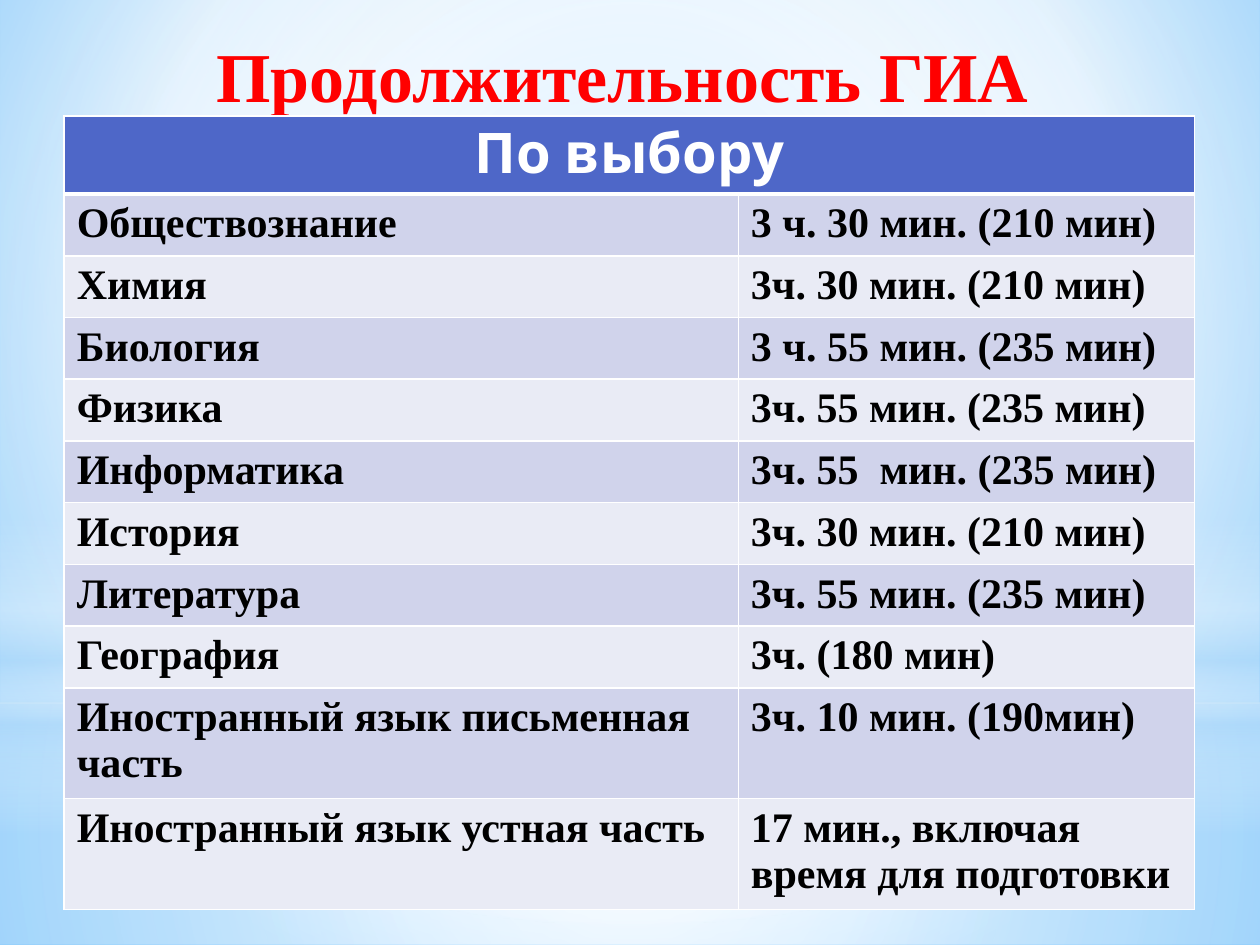
from dataclasses import dataclass

from pptx import Presentation
from pptx.dml.color import RGBColor
from pptx.enum.shapes import MSO_SHAPE
from pptx.enum.text import MSO_ANCHOR, MSO_AUTO_SIZE, PP_ALIGN
from pptx.oxml import parse_xml
from pptx.oxml.ns import nsdecls, qn
from pptx.util import Inches, Pt

RECT, OVAL = MSO_SHAPE.RECTANGLE, MSO_SHAPE.OVAL
TOP, NO_FIT = MSO_ANCHOR.TOP, MSO_AUTO_SIZE.NONE
LEFT, CENTER = PP_ALIGN.LEFT, PP_ALIGN.CENTER


@dataclass(frozen=True)
class Theme:
    white: str = "FFFFFF"
    pale: str = "B4DCFA"
    red: str = "FF0000"
    black: str = "000000"
    head: str = "4E67C8"
    bands: tuple = ("D0D3EB", "E9EBF5")
    sky: tuple = ((0, "9ED5FF", 100), (60, "FFFFFF", 100), (100, "5BB9FF", 100))
    serif: str = "Times New Roman"
    sans: str = "Karla"
    title_size: int = 40
    head_size: int = 32
    cell_size: int = 24


T = Theme()
MID = (50, 50, 50, 50)
W, P = T.white, T.pale

# Backdrop layers: shape, box, colour stops (place, colour, opacity), centre
LAYERS = [
    (RECT, (0, 5.58, 10, 1.92), [(0, W, 91), (37, W, 76), (100, P, 79)], MID),
    (RECT, (0, 0, 10, 5.58), [(0, W, 89), (48, W, 62), (100, P, 79)], MID),
    (RECT, (0, 4.12, 10, 2.5), [(0, W, 0), (29, W, 30), (45, P, 40),
                                (55, W, 26), (65, P, 60), (100, W, 0)], None),
    (OVAL, (0, 1.75, 10, 5.58), [(0, W, 100), (56, W, 0)], MID),
]

EXAMS = [
    ("Обществознание", "3 ч. 30 мин. (210 мин)"),
    ("Химия", "3ч. 30 мин. (210 мин)"),
    ("Биология", "3 ч. 55 мин. (235 мин)"),
    ("Физика", "3ч. 55 мин. (235 мин)"),
    ("Информатика", "3ч. 55  мин. (235 мин)"),
    ("История", "3ч. 30 мин. (210 мин)"),
    ("Литература", "3ч. 55 мин. (235 мин)"),
    ("География", "3ч. (180 мин)"),
    ("Иностранный язык письменная часть", "3ч. 10 мин. (190мин)"),
    ("Иностранный язык устная часть", "17 мин., включая время для подготовки"),
]
COLS = (5.35, 3.62)
ROWS = [0.61] + [0.49] * 8 + [0.88] * 2


def set_all(item, values):
    for name, value in values.items():
        setattr(item, name, value)


def write(frame, text, face, size, color, align):
    para = frame.paragraphs[0]
    para.alignment = align
    run = para.add_run()
    run.text = text
    set_all(run.font, {"name": face, "size": Pt(size), "bold": True})
    run.font.color.rgb = RGBColor.from_string(color)
    return para


def blend(holder, old, stops, focus):
    """Swap the plain fill of holder for a gradient."""
    marks = "".join(
        f'<a:gs pos="{place * 1000}"><a:srgbClr val="{color}">'
        f'<a:alpha val="{alpha * 1000}"/></a:srgbClr></a:gs>'
        for place, color, alpha in stops)
    if focus:
        sides = " ".join(f'{s}="{v * 1000}"' for s, v in zip("ltrb", focus))
        way = f'<a:path path="circle"><a:fillToRect {sides}/></a:path>'
    else:
        way = '<a:lin ang="5400000" scaled="0"/>'
    grad = parse_xml(f'<a:gradFill {nsdecls("a")} rotWithShape="1">'
                     f'<a:gsLst>{marks}</a:gsLst>{way}</a:gradFill>')
    holder.replace(holder.find(qn(old)), grad)


def edge(cell, last):
    """White cell borders; last is the width of the bottom one."""
    for side, width in zip("LRTB", (1, 1, 1, last)):
        cell._tc.get_or_add_tcPr().append(parse_xml(
            f'<a:ln{side} {nsdecls("a")} w="{Pt(width)}"><a:solidFill>'
            f'<a:srgbClr val="{T.white}"/></a:solidFill></a:ln{side}>'))


def add_sky(slide):
    slide.background.fill.solid()
    blend(slide._element.find(".//" + qn("p:bgPr")), "a:solidFill",
          T.sky, (20, 10, 20, 60))
    for kind, box, stops, focus in LAYERS:
        layer = slide.shapes.add_shape(kind, *map(Inches, box))
        layer.shadow.inherit = False
        layer.line.fill.background()
        layer.fill.background()
        blend(layer._element.spPr, "a:noFill", stops, focus)


def add_title(slide, box, text):
    title = slide.shapes.title
    names = ("left", "top", "width", "height")
    set_all(title, dict(zip(names, map(Inches, box))))
    frame = title.text_frame
    set_all(frame, {"vertical_anchor": TOP, "auto_size": NO_FIT,
                    "word_wrap": True})
    para = write(frame, text, T.serif, T.title_size, T.red, CENTER)
    set_all(para, {"space_before": Pt(5), "space_after": Pt(3)})
    para._p.get_or_add_pPr().set("marL", str(Inches(0.05)))
    # Bring the title in front of the backdrop
    slide.shapes._spTree.append(title._element)


def add_exams(slide, box, head):
    table = slide.shapes.add_table(
        len(ROWS), len(COLS), *map(Inches, box)).table
    for col, width in zip(table.columns, COLS):
        col.width = Inches(width)
    for row, height in zip(table.rows, ROWS):
        row.height = Inches(height)

    # Header across both columns
    first = table.cell(0, 0)
    first.merge(table.cell(0, 1))
    write(first.text_frame, head, T.sans, T.head_size, T.white, CENTER)

    # Subjects and times
    for i, exam in enumerate(EXAMS, 1):
        for j, text in enumerate(exam):
            write(table.cell(i, j).text_frame, text,
                  T.serif, T.cell_size, T.black, LEFT)

    # Borders and banded fills
    for i, row in enumerate(table.rows):
        color = T.bands[(i - 1) % 2] if i else T.head
        for cell in row.cells:
            edge(cell, 1 if i else 3)
            cell.fill.solid()
            cell.fill.fore_color.rgb = RGBColor.from_string(color)


def main():
    deck = Presentation()
    set_all(deck, {"slide_width": Inches(10), "slide_height": Inches(7.5)})
    slide = deck.slides.add_slide(deck.slide_layouts[5])
    add_sky(slide)
    add_title(slide, (0.35, 0.21, 9.13, 4.24), "Продолжительность ГИА")
    add_exams(slide, (0.51, 0.92, sum(COLS), sum(ROWS)), "По выбору")
    deck.save("out.pptx")


if __name__ == "__main__":
    main()
